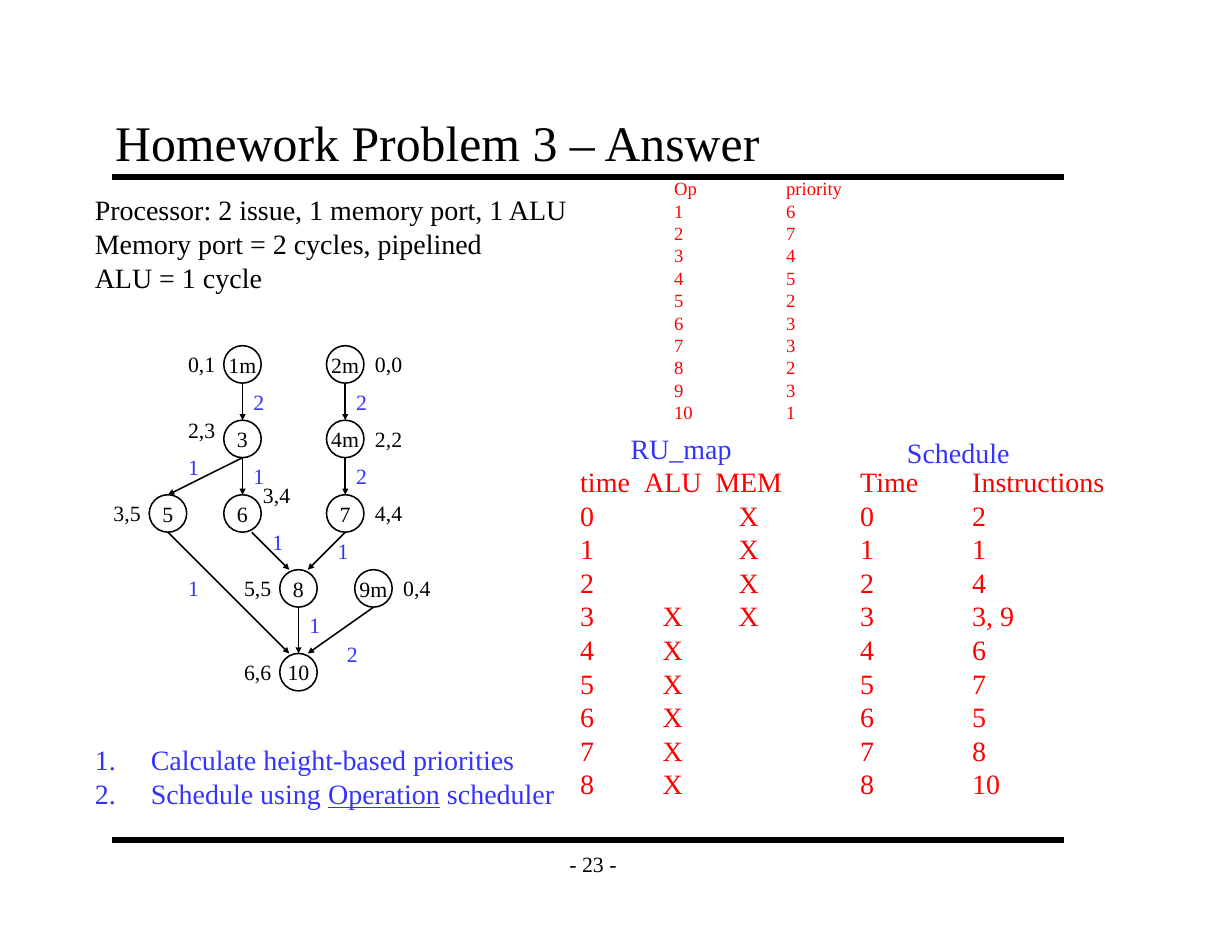
"""Build the list-scheduling homework answer slide with its dependence graph and tables."""
from dataclasses import dataclass

from pptx import Presentation
from pptx.dml.color import RGBColor
from pptx.enum.shapes import MSO_CONNECTOR as Connector, MSO_SHAPE as Preset
from pptx.enum.text import MSO_ANCHOR as Anchor, PP_ALIGN as Align
from pptx.oxml.ns import qn
from pptx.shapes.connector import Connector as Line
from pptx.slide import Slide
from pptx.text.text import TextFrame, _Paragraph as Paragraph
from pptx.util import Cm, Pt
from lxml.etree import SubElement

BLACK = RGBColor(0x00, 0x00, 0x00)
BLUE = RGBColor(0x33, 0x33, 0xFF)
RED = RGBColor(0xFF, 0x00, 0x00)
FONT = "Times New Roman"
DIAMETER = 0.85
LABEL_HEIGHT = 0.84
LEFT, RIGHT = -1.06, DIAMETER


@dataclass
class Node:
    label: str
    center: float
    top: float
    times: str
    times_dx: float
    times_dy: float = 0


@dataclass
class Edge:
    source: str
    target: str
    latency: str
    label_x: float
    label_y: float
    start_shift: float = 0
    end_shift: float = 0


@dataclass
class Table:
    left: float
    top: float
    width: float
    height: float
    size: int
    tabs: list[tuple[float, str]]
    rows: list[str]


NODES = [
    Node("1m", 5.5, 7.84, "0,1", LEFT),
    Node("2m", 7.83, 7.84, "0,0", RIGHT),
    Node("3", 5.5, 9.53, "2,3", LEFT, -0.21),
    Node("4m", 7.83, 9.53, "2,2", RIGHT),
    Node("5", 3.81, 11.22, "3,5", LEFT),
    Node("6", 5.5, 11.22, "3,4", 0.64, -0.43),
    Node("7", 7.83, 11.22, "4,4", RIGHT),
    Node("8", 6.77, 12.92, "5,5", LEFT),
    Node("9m", 8.47, 12.92, "0,4", RIGHT),
    Node("10", 6.77, 14.82, "6,6", LEFT),
]
EDGES = [
    Edge("1m", "3", "2", 5.5, 8.69),
    Edge("2m", "4m", "2", 7.83, 8.69),
    Edge("4m", "7", "2", 7.83, 10.38),
    Edge("3", "6", "1", 5.5, 10.38),
    Edge("3", "5", "1", 4.02, 10.16),
    Edge("5", "10", "1", 4.02, 12.92, end_shift=-0.21),
    Edge("6", "8", "1", 5.93, 11.86, 0.21, -0.21),
    Edge("7", "8", "1", 7.41, 12.07, end_shift=0.21),
    Edge("8", "10", "1", 6.77, 13.76),
    Edge("9m", "10", "2", 7.62, 14.4, end_shift=0.21),
]
PRIORITIES = [6, 7, 4, 5, 2, 3, 3, 2, 3, 1]
SCHEDULE = ["2", "1", "4", "3, 9", "6", "7", "5", "8", "10"]
RESOURCES = ["\t\tX"] * 3 + ["\tX\tX"] + ["\tX"] * 5
TABLES = [
    Table(15.04, 3.89, 4.37, 5.89, 12, [(2.54, "l")],
          ["Op\tpriority"] + [f"{op}\t{priority}" for op, priority in enumerate(PRIORITIES, 1)]),
    Table(12.91, 10.41, 5.4, 7.95, 18, [(2.1, "ctr"), (3.82, "ctr")],
          ["time\tALU\tMEM"] + [f"{time}{use}" for time, use in enumerate(RESOURCES)]),
    Table(19.26, 10.41, 6.2, 7.95, 18, [(2.54, "l")],
          ["Time\tInstructions"] + [f"{time}\t{ops}" for time, ops in enumerate(SCHEDULE)]),
]


def style(paragraph: Paragraph, size: int, color: RGBColor) -> None:
    paragraph.font.name = FONT
    paragraph.font.size = Pt(size)
    paragraph.font.color.rgb = color


def add_text(slide: Slide, lines: list[str], left: float, top: float, width: float,
             height: float, size: int, color: RGBColor, wrap: bool = False) -> TextFrame:
    box = slide.shapes.add_textbox(Cm(left), Cm(top), Cm(width), Cm(height))
    frame = box.text_frame
    frame.word_wrap = wrap
    frame.text = "\n".join(lines)
    for paragraph in frame.paragraphs:
        style(paragraph, size, color)
    return frame


def add_line(slide: Slide, x1: float, y1: float, x2: float, y2: float, width: float) -> Line:
    line = slide.shapes.add_connector(Connector.STRAIGHT, Cm(x1), Cm(y1), Cm(x2), Cm(y2))
    line.line.color.rgb = BLACK
    line.line.width = Pt(width)
    SubElement(line._element.spPr, qn("a:effectLst"))
    return line


def add_node(slide: Slide, node: Node) -> None:
    left = node.center - DIAMETER / 2
    circle = slide.shapes.add_shape(Preset.OVAL, Cm(left), Cm(node.top), Cm(DIAMETER), Cm(DIAMETER))
    circle.shadow.inherit = False
    circle.fill.background()
    circle.line.color.rgb = BLACK
    circle.line.width = Pt(1)
    frame = circle.text_frame
    frame.word_wrap = False
    frame.vertical_anchor = Anchor.MIDDLE
    frame.text = node.label
    frame.paragraphs[0].alignment = Align.CENTER
    style(frame.paragraphs[0], 14, BLACK)
    add_text(slide, [node.times], left + node.times_dx, node.top + node.times_dy,
             1.12, LABEL_HEIGHT, 14, BLACK)


def add_edge(slide: Slide, edge: Edge, nodes: dict[str, Node]) -> None:
    source, target = nodes[edge.source], nodes[edge.target]
    arrow = add_line(slide, source.center + edge.start_shift, source.top + DIAMETER,
                     target.center + edge.end_shift, target.top, 1)
    SubElement(arrow.line._get_or_add_ln(), qn("a:tailEnd"), type="triangle", w="sm", len="sm")
    add_text(slide, [edge.latency], edge.label_x, edge.label_y, 0.76, LABEL_HEIGHT, 14, BLUE)


def add_tabbed_table(slide: Slide, table: Table) -> None:
    frame = add_text(slide, table.rows, table.left, table.top, table.width, table.height,
                     table.size, RED, wrap=True)
    for paragraph in frame.paragraphs:
        properties = paragraph._p.get_or_add_pPr()
        tab_list = properties.makeelement(qn("a:tabLst"), {})
        properties.insert(0, tab_list)
        for position, alignment in table.tabs:
            SubElement(tab_list, qn("a:tab"), pos=str(Cm(position)), algn=alignment)


def add_steps(slide: Slide) -> None:
    frame = add_text(slide, ["Calculate height-based priorities", "Schedule using "],
                     1.9, 16.72, 11.2, 1.78, 18, BLUE, wrap=True)
    second = frame.paragraphs[1]
    operation = second.add_run()
    operation.text = "Operation"
    operation.font.underline = True
    second.add_run().text = " scheduler"
    for paragraph in frame.paragraphs:
        properties = paragraph._p.get_or_add_pPr()
        properties.set("marL", str(Cm(1.27)))
        properties.set("indent", str(-Cm(1.27)))
        numbering = properties.makeelement(qn("a:buAutoNum"), {"type": "arabicPeriod"})
        properties.insert(0, numbering)


def add_title(slide: Slide, text: str) -> None:
    title = slide.shapes.title
    title.left, title.top, title.width, title.height = Cm(2.33), Cm(2.33), Cm(22.65), Cm(1.7)
    frame = title.text_frame
    frame.text = text
    frame.vertical_anchor = Anchor.BOTTOM
    frame.margin_left = frame.margin_right = Cm(0.28)
    frame.margin_top = frame.margin_bottom = Cm(0.15)
    frame.paragraphs[0].alignment = Align.LEFT
    style(frame.paragraphs[0], 32, BLACK)


def main() -> None:
    presentation = Presentation()
    presentation.slide_width, presentation.slide_height = Cm(27.94), Cm(21.59)
    slide = presentation.slides.add_slide(presentation.slide_layouts[5])
    for y in (4.02, 19.05):
        add_line(slide, 2.54, y, 24.13, y, 4)
    number = add_text(slide, ["- 23 -"], 12.5, 19.05, 1.9, 1.06, 14, BLACK)
    number.vertical_anchor = Anchor.MIDDLE
    number.paragraphs[0].alignment = Align.CENTER
    add_title(slide, "Homework Problem 3 – Answer")
    add_text(slide, ["Processor: 2 issue, 1 memory port, 1 ALU", "Memory port = 2 cycles, pipelined",
                     "ALU = 1 cycle"], 1.9, 4.25, 11.6, 2.57, 18, BLACK, wrap=True)
    nodes = {node.label: node for node in NODES}
    for node in NODES:
        add_node(slide, node)
    for edge in EDGES:
        add_edge(slide, edge, nodes)
    add_steps(slide)
    add_text(slide, ["RU_map"], 14.05, 9.67, 3.2, 1.02, 18, BLUE, wrap=True)
    add_text(slide, ["Schedule"], 20.32, 9.75, 3.2, 1.02, 18, BLUE, wrap=True)
    for table in TABLES:
        add_tabbed_table(slide, table)
    presentation.save("out.pptx")


if __name__ == "__main__":
    main()
